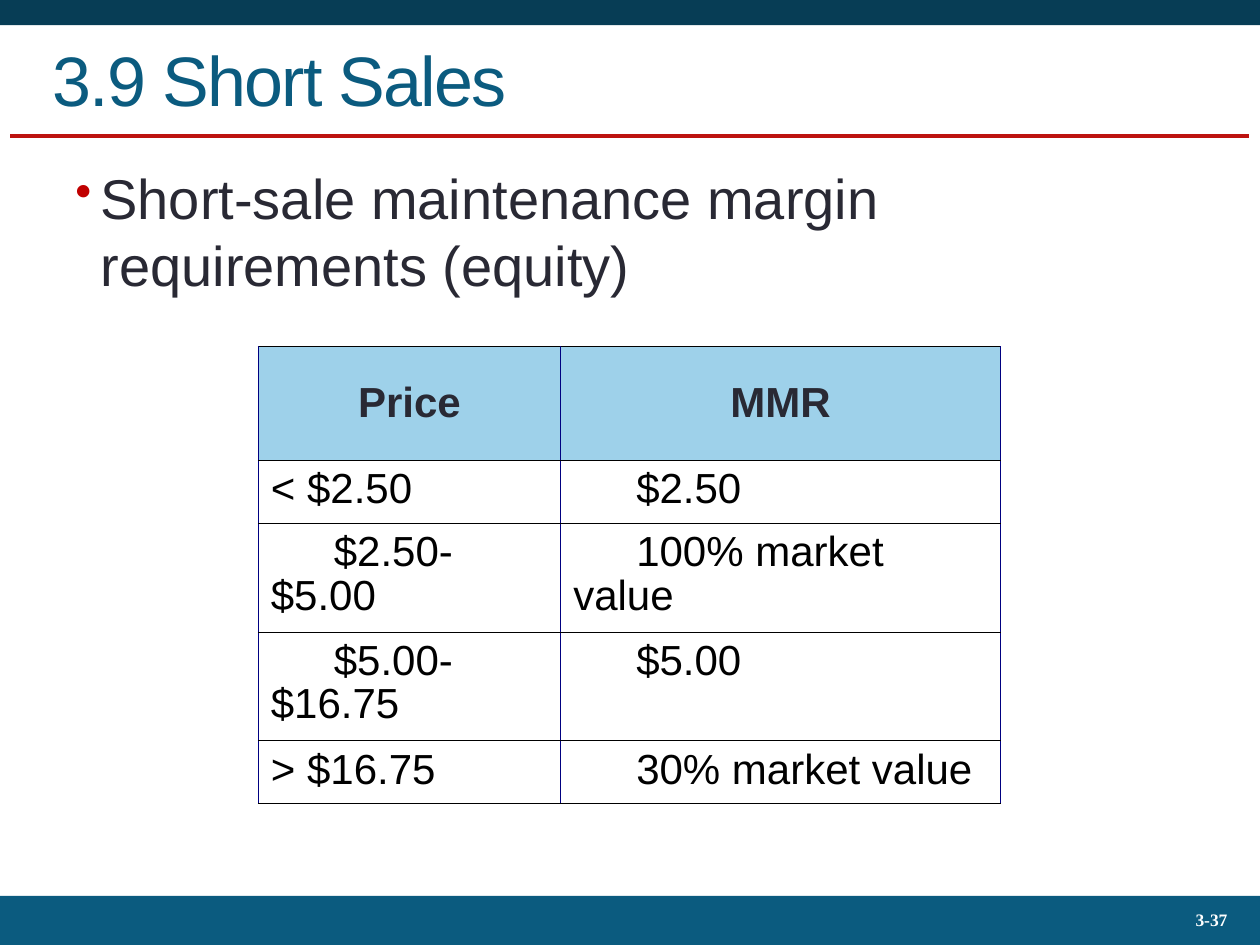
from pptx import Presentation
from pptx.dml.color import RGBColor
from pptx.enum.shapes import MSO_CONNECTOR as Connector, MSO_SHAPE as Shape
from pptx.enum.text import MSO_ANCHOR as Anchor, PP_ALIGN as Align
from pptx.oxml.ns import qn
from pptx.util import Inches, Pt
from lxml.etree import SubElement

NAVY = RGBColor(0x07, 0x3D, 0x55)
TEAL = RGBColor(0x0B, 0x5B, 0x7F)
RED = RGBColor(0xBD, 0x13, 0x0F)
BULLET_RED = RGBColor(0xC0, 0x00, 0x00)
INK = RGBColor(0x29, 0x29, 0x34)
SKY = RGBColor(0x9E, 0xD1, 0xEA)
BORDER_BLUE = RGBColor(0x00, 0x00, 0x80)
BLACK = RGBColor(0x00, 0x00, 0x00)
WHITE = RGBColor(0xFF, 0xFF, 0xFF)

WIDTH, HEIGHT = Inches(10), Inches(7.5)
COLUMNS, ROWS = 100, 75

MARGIN_RULES = [
    ("Price", "MMR"),
    ("< $2.50", "$2.50"),
    ("$2.50-$5.00", "100% market value"),
    ("$5.00-$16.75", "$5.00"),
    ("> $16.75", "30% market value"),
]


def write(tf, text, size, color, font="Arial", bold=False, align=Align.LEFT,
          anchor=Anchor.TOP, leading=None, spacing=0, margin=0, indent=0):
    p = tf.paragraphs[0]
    p.alignment, p.line_spacing = align, leading
    tf.word_wrap, tf.vertical_anchor = True, anchor
    pPr = p._p.get_or_add_pPr()
    pPr.set("marL", str(Inches(margin)))
    pPr.set("indent", str(Inches(indent)))
    r = p.add_run()
    r.text = text
    f = r.font
    f.name, f.size, f.bold, f.color.rgb = font, Pt(size), bold, color
    if spacing:
        r._r.get_or_add_rPr().set("spc", str(spacing * 100))
    return p


class Deck:
    """Holds the style and the current slide, measured on a grid."""

    def __init__(self, prs):
        self.slide = prs.slides.add_slide(prs.slide_layouts[6])
        self.shapes = self.slide.shapes

    def place(self, *lengths):
        units = (WIDTH / COLUMNS, HEIGHT / ROWS) * 2
        return [round(n * unit) for n, unit in zip(lengths, units)]

    def band(self, at, color):
        s = self.shapes.add_shape(Shape.RECTANGLE, *self.place(*at))
        s.shadow.inherit = False
        s.fill.solid()
        s.fill.fore_color.rgb = color
        s.line.fill.background()

    def rule(self, ends, color, weight):
        s = self.shapes.add_connector(Connector.STRAIGHT, *self.place(*ends))
        s.line.color.rgb, s.line.width = color, Pt(weight)
        SubElement(s._element.spPr, qn("a:effectLst"))

    def text(self, at, text, **style):
        s = self.shapes.add_textbox(*self.place(*at))
        return write(s.text_frame, text, **style)

    def bullet(self, at, text, **style):
        p = self.text(at, text, margin=0.2, indent=-0.2, **style)
        p.space_before, p.space_after = Pt(6.4), Pt(14.2)
        pPr = p._p.get_or_add_pPr()
        color = SubElement(pPr, qn("a:buClr"))
        SubElement(color, qn("a:srgbClr"), val=str(BULLET_RED))
        SubElement(pPr, qn("a:buSzPct"), val="85000")
        SubElement(pPr, qn("a:buChar"), char="•")

    def border(self, cell, side, color, weight):
        ln = SubElement(cell._tc.get_or_add_tcPr(), qn(f"a:ln{side}"), w=str(Pt(weight)))
        fill = SubElement(ln, qn("a:solidFill"))
        SubElement(fill, qn("a:srgbClr"), val=str(color))

    def cell(self, cell, text, header, indent):
        cell.margin_top = Inches(0.07)
        last = "B"
        for side in "LRT" + last:
            vertical = side in "LR"
            self.border(cell, side, BORDER_BLUE if vertical else BLACK,
                        0.45 if vertical else 0.34)
        cell.fill.solid()
        cell.fill.fore_color.rgb = SKY if header else WHITE
        write(cell.text_frame, text, size=24, color=INK if header else BLACK,
              bold=header, align=Align.CENTER if header else Align.LEFT,
              leading=0.93, indent=indent)
        cell.vertical_anchor = Anchor.MIDDLE if header else Anchor.TOP

    def table(self, at, data, widths, heights):
        s = self.shapes.add_table(len(data), len(data[0]), *self.place(*at))
        table = s.table
        table.first_row = table.horz_banding = False
        for column, width in zip(table.columns, widths):
            column.width = self.place(width)[0]
        for row, height in zip(table.rows, heights):
            row.height = self.place(0, height)[1]
        for i, values in enumerate(data):
            for j, text in enumerate(values):
                header = i == 0
                flush = header or text[0] in "<>"
                self.cell(table.cell(i, j), text, header, 0 if flush else 0.5)


def main():
    prs = Presentation()
    prs.slide_width, prs.slide_height = WIDTH, HEIGHT
    deck = Deck(prs)
    deck.band((0, 0, 100, 2), NAVY)
    deck.rule((0.8, 10.8, 99.1, 10.8), RED, 2.25)
    deck.band((0, 71.1, 100, 4), TEAL)
    deck.text((86.7, 71.3, 11.7, 3.6), "3-37", size=10, color=WHITE,
              font="Times New Roman", bold=True, align=Align.RIGHT,
              anchor=Anchor.MIDDLE, leading=0.93)
    deck.text((3.2, 1.7, 93.7, 9.1), "3.9 Short Sales", size=40, color=TEAL,
              anchor=Anchor.MIDDLE, spacing=-1)
    deck.bullet((5, 12.5, 90, 53.3),
                "Short-sale maintenance margin requirements (equity)",
                size=32, color=INK)
    deck.table((20.5, 27.5, 58.9, 29), MARGIN_RULES, widths=(24, 34.9),
               heights=(9, 5, 4.9, 4.2, 5))
    prs.save("out.pptx")


if __name__ == "__main__":
    main()
